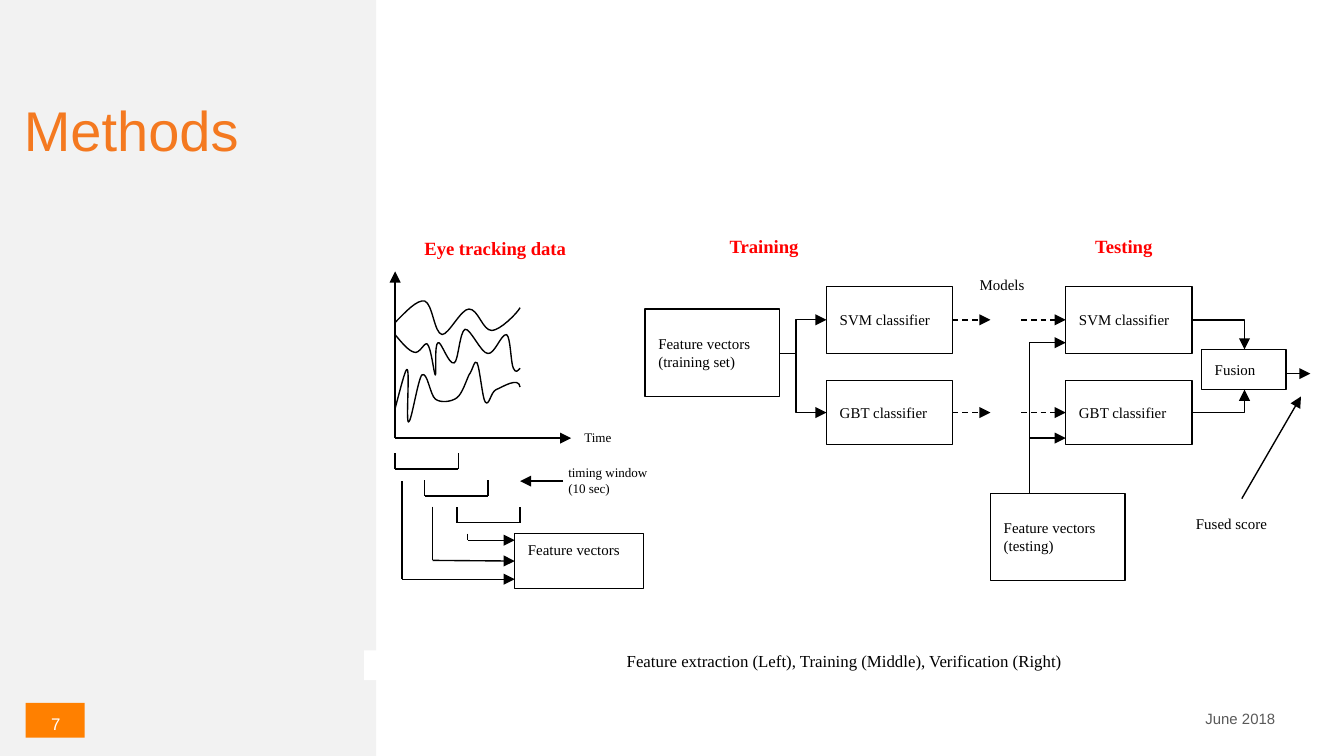
from lxml import etree
from pptx import Presentation
from pptx.dml.color import RGBColor
from pptx.enum.dml import MSO_LINE
from pptx.enum.shapes import MSO_CONNECTOR, MSO_SHAPE
from pptx.enum.text import MSO_ANCHOR, PP_ALIGN
from pptx.oxml.ns import qn
from pptx.util import Inches, Pt

RECT = MSO_SHAPE.RECTANGLE
LINE, ELBOW = MSO_CONNECTOR.STRAIGHT, MSO_CONNECTOR.ELBOW
DASH = MSO_LINE.DASH
TOP, MID = MSO_ANCHOR.TOP, MSO_ANCHOR.MIDDLE
LEFT, MIDDLE = PP_ALIGN.LEFT, PP_ALIGN.CENTER
WIDE = 10
HIGH = WIDE * 9 / 16
SANS, SERIF = "Arial", "Times New Roman"
COLOR = {"ink": "000000", "white": "FFFFFF", "panel": "F2F2F2", "badge": "FF8000",
         "title": "F47920", "head": "FF0000", "date": "595959"}
BODY = {"name": SERIF, "size": Pt(8)}
HEAD = {"name": SERIF, "size": Pt(10), "bold": True}
NOTE = {"name": SERIF, "size": Pt(7)}
SMALL = {"name": SANS, "size": Pt(8)}
COUNT = {"name": SANS, "size": Pt(9)}
TITLE = {"name": SANS, "size": Pt(30)}
LEGEND = {"name": SERIF, "size": Pt(9)}

CURVES = [
    [(2.94, 2.4), (3.02, 2.32), (3.1, 2.23), (3.16, 2.24), (3.22, 2.26), (3.23, 2.48),
     (3.29, 2.49), (3.34, 2.49), (3.43, 2.3), (3.49, 2.3), (3.56, 2.3), (3.59, 2.46),
     (3.66, 2.46), (3.72, 2.46), (3.85, 2.33), (3.87, 2.29)],
    [(2.94, 2.49), (2.99, 2.55), (3.04, 2.61), (3.08, 2.62), (3.12, 2.64), (3.16, 2.54),
     (3.18, 2.56), (3.21, 2.59), (3.23, 2.79), (3.24, 2.79), (3.25, 2.78), (3.23, 2.56),
     (3.26, 2.55), (3.28, 2.53), (3.34, 2.72), (3.38, 2.7), (3.41, 2.69), (3.42, 2.47),
     (3.46, 2.45), (3.5, 2.44), (3.58, 2.63), (3.63, 2.63), (3.68, 2.64), (3.73, 2.48),
     (3.77, 2.49), (3.8, 2.51), (3.8, 2.7), (3.82, 2.74), (3.84, 2.78), (3.85, 2.76),
     (3.87, 2.74)],
    [(2.94, 3.04), (2.98, 2.89), (3.02, 2.73), (3.03, 2.75), (3.05, 2.76), (3.02, 3.14),
     (3.04, 3.14), (3.06, 3.15), (3.11, 2.82), (3.14, 2.79), (3.18, 2.76), (3.2, 2.94),
     (3.24, 2.97), (3.28, 3), (3.36, 2.99), (3.4, 2.96), (3.44, 2.93), (3.47, 2.83),
     (3.49, 2.79), (3.52, 2.75), (3.53, 2.67), (3.55, 2.7), (3.57, 2.74), (3.59, 2.96),
     (3.61, 2.99), (3.64, 3.03), (3.65, 2.92), (3.69, 2.9), (3.74, 2.88), (3.86, 2.8),
     (3.87, 2.88)],
]


def paint(hue):
    """Return the colour with the given name."""
    return RGBColor.from_string(COLOR[hue])


def ink(line):
    """Give a line the common black stroke."""
    line.color.rgb = paint("ink")
    line.width = Pt(0.75)


def write(shape, text, font, hue, align=LEFT, anchor=TOP, wrap=True):
    """Write text lines into a shape."""
    frame = shape.text_frame
    frame.word_wrap = wrap
    frame.vertical_anchor = anchor
    frame.text = text
    for para in frame.paragraphs:
        para.alignment = align
        para.font.color.rgb = paint(hue)
        for key, value in font.items():
            setattr(para.font, key, value)


def block(slide, at, fill="white", edge=False):
    """Add a filled rectangle."""
    shape = slide.shapes.add_shape(RECT, *map(Inches, at))
    shape.shadow.inherit = False
    shape.fill.solid()
    shape.fill.fore_color.rgb = paint(fill)
    if edge:
        ink(shape.line)
    else:
        shape.line.fill.background()
    return shape


def node(slide, at, text, anchor=MID):
    """Add an outlined box of the flow."""
    shape = block(slide, at, edge=True)
    write(shape, text, BODY, "ink", anchor=anchor)
    return shape


def label(slide, at, text, font=BODY, hue="ink", anchor=TOP):
    """Add a white label without outline."""
    shape = block(slide, at)
    write(shape, text, font, hue, anchor=anchor)
    return shape


def plain(slide, at, text, font, hue, **style):
    """Add a text box."""
    write(slide.shapes.add_textbox(*map(Inches, at)), text, font, hue, **style)


def link(slide, start, end, head=True, dash=False, kind=LINE, source=None, target=None):
    """Add a connector, joined to (shape, side) pairs if given."""
    wire = slide.shapes.add_connector(kind, *map(Inches, start + end))
    if source:
        wire.begin_connect(*source)
    if target:
        wire.end_connect(*target)
    ink(wire.line)
    if dash:
        wire.line.dash_style = DASH
    if head:
        etree.SubElement(wire.line._get_or_add_ln(), qn("a:tailEnd"), type="triangle")
    etree.SubElement(wire.element.spPr, qn("a:effectLst"))
    return wire


def bend(slide, start, end, turn=None):
    """Add an elbow arrow turning at a share of its width, or once."""
    wire = link(slide, start, end, kind=ELBOW)
    geom = wire.element.spPr.find(qn("a:prstGeom"))
    if turn is None:
        geom.set("prst", "bentConnector2")
    else:
        guide = geom.find(qn("a:avLst"))
        etree.SubElement(guide, qn("a:gd"), name="adj1", fmla=f"val {round(turn * 100000)}")


def curve(slide, points):
    """Add a smooth open curve from cubic control points."""
    dots = [(Inches(x), Inches(y)) for x, y in points]
    build = slide.shapes.build_freeform(*dots[0], scale=1)
    build.add_line_segments(dots[1:], close=False)
    shape = build.convert_to_shape()
    shape.shadow.inherit = False
    shape.fill.background()
    ink(shape.line)
    steps = list(shape.element.iter(qn("a:lnTo")))
    for i in range(0, len(steps), 3):
        first, *rest = steps[i:i + 3]
        cubic = etree.Element(qn("a:cubicBezTo"))
        first.addprevious(cubic)
        for step in (first, *rest):
            cubic.append(step[0])
            step.getparent().remove(step)


def frame(slide):
    """Add the side panel, title, date, number and legend."""
    plain(slide, (8.87, 5.23, 0.73, 0.24), "June 2018", SMALL, "date", wrap=False)
    block(slide, (0, 0, 2.8, HIGH), "panel")
    block(slide, (0.19, 5.23, 0.44, 0.26), "badge")
    plain(slide, (0.22, 5.26, 0.39, 0.2), "7", COUNT, "white", align=MIDDLE)
    plain(slide, (0.08, 0.66, 2.54, 2.59), "Methods", TITLE, "title")
    legend = block(slide, (2.71, 4.84, 7.14, 0.22))
    for side in ("left", "right", "top", "bottom"):
        setattr(legend.text_frame, f"margin_{side}", 0)
    write(legend, "Feature extraction (Left), Training (Middle), Verification (Right)",
          LEGEND, "ink", align=MIDDLE)


def track(slide):
    """Add the eye tracking chart, its windows and feature box."""
    label(slide, (3.06, 1.71, 1.34, 0.35), "Eye tracking data", HEAD, "head")
    label(slide, (4.13, 3.41, 0.91, 0.3), "timing window (10 sec)", NOTE)
    label(slide, (4.25, 3.15, 0.49, 0.3), "Time", NOTE)
    for end in ((4.25, 3.26), (2.94, 2.02)):
        link(slide, (2.94, 3.26), end)
    for points in CURVES:
        curve(slide, points)
    for x, y in ((2.94, 3.49), (3.16, 3.69), (3.4, 3.89)):
        link(slide, (x, y), (x + 0.47, y), head=False)
        for side in (x, x + 0.47):
            link(slide, (side, y), (side, y - 0.12), head=False)
    link(slide, (4.19, 3.58), (3.87, 3.58))
    store = node(slide, (3.83, 3.97, 0.96, 0.41), "Feature vectors", TOP)
    for x, top, y, goal in ((2.99, 3.58, 4.31, None), (3.22, 3.77, 4.17, (store, 1)),
                            (3.48, 3.97, 4.02, None)):
        link(slide, (x, top), (x, y), head=False)
        link(slide, (x, y), (3.83, y), target=goal)


def train(slide):
    """Add the training stage."""
    label(slide, (5.33, 1.7, 0.75, 0.37), "Training", HEAD, "head")
    label(slide, (7.19, 1.93, 0.66, 0.37), "Models", anchor=MID)
    node(slide, (4.8, 2.3, 1, 0.65), "Feature vectors\n(training set)")
    for name, top, high, y in (("SVM", 2.13, 0.5, 2.38), ("GBT", 2.83, 0.48, 3.07)):
        box = node(slide, (6.15, top, 0.94, high), f"{name} classifier")
        bend(slide, (5.8, 2.63), (6.15, y), 0.35)
        link(slide, (7.09, y), (7.37, y), dash=True, source=(box, 3))


def test(slide):
    """Add the testing stage and score fusion."""
    label(slide, (8.05, 1.7, 0.75, 0.37), "Testing", HEAD, "head")
    node(slide, (7.37, 3.67, 1, 0.65), "Feature vectors\n(testing)")
    node(slide, (8.94, 2.6, 0.63, 0.3), "Fusion")
    for name, top, high, y, feed, edge in (("SVM", 2.13, 0.5, 2.38, 2.55, 2.6),
                                           ("GBT", 2.83, 0.48, 3.07, 3.26, 2.9)):
        box = node(slide, (7.93, top, 0.94, high), f"{name} classifier")
        link(slide, (7.6, y), (7.93, y), dash=True, target=(box, 1))
        link(slide, (7.66, feed), (7.93, feed))
        bend(slide, (8.88, y), (9.26, edge))
    link(slide, (7.66, 2.55), (7.66, 3.67), head=False)
    link(slide, (9.57, 2.78), (9.75, 2.78))
    score = label(slide, (8.8, 3.71, 0.88, 0.37), "Fused score", anchor=MID)
    link(slide, (9.24, 3.71), (9.68, 2.95), source=(score, 0))


def main():
    """Build and save the slide."""
    deck = Presentation()
    deck.slide_width, deck.slide_height = Inches(WIDE), Inches(HIGH)
    slide = deck.slides.add_slide(deck.slide_layouts[6])
    for part in (frame, track, train, test):
        part(slide)
    deck.save("out.pptx")


if __name__ == "__main__":
    main()
